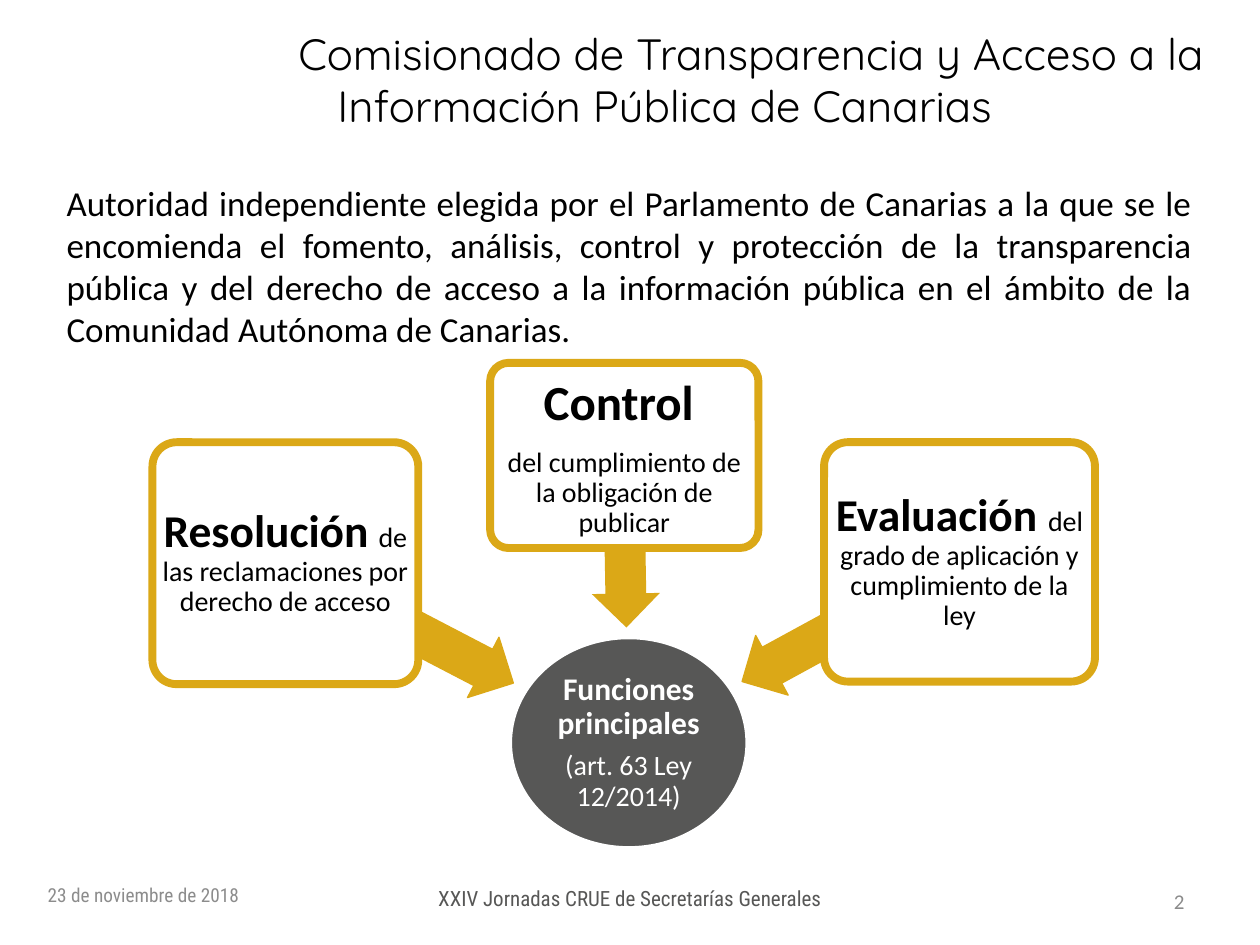
import dataclasses

import pptx
import pptx.dml.color
import pptx.enum.shapes
import pptx.enum.text
import pptx.util

Inches = pptx.util.Inches
Pt = pptx.util.Pt
Align = pptx.enum.text.PP_ALIGN
Anchor = pptx.enum.text.MSO_ANCHOR
Shape = pptx.enum.shapes.MSO_SHAPE


@dataclasses.dataclass(frozen=True)
class Theme:
    heading: str = "Quicksand"
    body: str = "Calibri"
    footer: str = "Roboto Condensed"
    black: str = "000000"
    white: str = "FFFFFF"
    gold: str = "DBA817"
    slate: str = "575756"
    date_gray: str = "8C8C8C"
    number_gray: str = "8B8B8B"
    title: int = 25
    intro: int = 20
    control: int = 28
    keyword: int = 26
    keyword_gap: int = 24
    hub: int = 18
    detail: int = 16
    small: int = 12
    date: int = 11


THEME = Theme()


def rgb(value):
    return pptx.dml.color.RGBColor.from_string(value)


def apply(target, values):
    for name, value in values.items():
        setattr(target, name, value)


def add_span(para, text, size, color, font=THEME.body, bold=False):
    span = para.add_run()
    span.text = text
    apply(span.font, {"size": Pt(size), "name": font, "bold": bold})
    span.font.color.rgb = rgb(color)


def add_text(page, box, text, size, color, font, align=Align.LEFT, anchor=Anchor.TOP):
    frame = page.shapes.add_textbox(*map(Inches, box)).text_frame
    apply(frame, {"word_wrap": True, "vertical_anchor": anchor})
    para = frame.paragraphs[0]
    para.alignment = align
    add_span(para, text, size, color, font)
    return para


def add_figure(page, kind, box, fill, line=None, width=0):
    figure = page.shapes.add_shape(kind, *map(Inches, box))
    figure.shadow.inherit = False
    figure.fill.solid()
    figure.fill.fore_color.rgb = rgb(fill)
    if line:
        figure.line.color.rgb = rgb(line)
        figure.line.width = Pt(width)
    else:
        figure.line.fill.background()
    return figure


def fill_figure(figure, paragraphs, color, inset):
    frame = figure.text_frame
    sides = ("left", "top", "right", "bottom")
    apply(frame, {f"margin_{side}": Inches(inset) for side in sides})
    apply(frame, {"word_wrap": True, "vertical_anchor": Anchor.MIDDLE})
    for index, (spacing, spans) in enumerate(paragraphs):
        para = frame.add_paragraph() if index else frame.paragraphs[0]
        apply(para, {"alignment": Align.CENTER, "line_spacing": spacing,
                     "space_after": Pt(round(0.35 * spans[0][1]))})
        for text, size, bold in spans:
            add_span(para, text, size, color, bold=bold)


def add_title(page, box):
    para = add_text(page, box, "Comisionado de Transparencia y Acceso a la Información Pública de Canarias",
                    THEME.title, THEME.black, THEME.heading, anchor=Anchor.MIDDLE)
    para.space_before = Pt(5.4)
    properties = para._p.get_or_add_pPr()
    properties.set("marL", str(Inches(0.81)))
    properties.set("indent", str(Inches(-0.31)))


def add_intro(page, box):
    add_text(page, box,
             "Autoridad independiente elegida por el Parlamento de Canarias a la que se le "
             "encomienda el fomento, análisis, control y protección de la transparencia pública "
             "y del derecho de acceso a la información pública en el ámbito de la Comunidad "
             "Autónoma de Canarias.",
             THEME.intro, THEME.black, THEME.body, Align.JUSTIFY)


def add_hub(page, box):
    hub = add_figure(page, Shape.OVAL, box, THEME.slate, THEME.white, 2)
    fill_figure(hub, [
        (0.9, [("Funciones principales", THEME.hub, True)]),
        (0.9, [("(art. 63 Ley 12/2014)", THEME.detail, False)]),
    ], THEME.white, 0.01)


def add_function(page, box, paragraphs, inset, arrow_box, angle, outline):
    arrow = add_figure(page, Shape.LEFT_ARROW, arrow_box, THEME.gold, outline, 0.75)
    arrow.rotation = angle
    arrow.adjustments[0] = 0.6
    card = add_figure(page, Shape.ROUNDED_RECTANGLE, box, THEME.white, THEME.gold, 4.5)
    card.adjustments[0] = 0.1
    fill_figure(card, paragraphs, THEME.black, inset)


def add_diagram(page, left, top):
    def place(x, y, width, height):
        return left + x, top + y, width, height

    add_hub(page, place(2.84, 2.18, 1.88, 1.67))
    resolution = [(0.9, [
        ("Resolución", THEME.keyword, True),
        (" ", THEME.keyword_gap, False),
        ("de las reclamaciones por derecho de acceso", THEME.detail, False),
    ])]
    control = [
        (1.0, [("Control ", THEME.control, True)]),
        (0.9, [("del cumplimiento de la obligación de publicar", THEME.detail, False)]),
    ]
    evaluation = [(0.9, [
        ("Evaluación ", THEME.keyword, True),
        ("del grado de aplicación y cumplimiento de la ley", THEME.detail, False),
    ])]
    functions = [
        ((0, 0.63, 2.11, 1.92), resolution, 0, (0.94, 1.8, 2.04, 0.54), 207.5, THEME.gold),
        ((2.68, 0, 2.13, 1.47), control, 0.02, (3.07, 1.15, 1.36, 0.54), 269, None),
        ((5.33, 0.63, 2.15, 1.9), evaluation, 0, (4.56, 1.79, 1.96, 0.54), 331.4, THEME.gold),
    ]
    for box, paragraphs, inset, arrow_box, angle, outline in functions:
        add_function(page, place(*box), paragraphs, inset, place(*arrow_box), angle, outline)


def add_footer(page, left, top):
    add_text(page, (left, top, 2.33, 0.4), "23 de noviembre de 2018",
             THEME.date, THEME.date_gray, THEME.footer, anchor=Anchor.MIDDLE)
    add_text(page, (left + 2.75, top + 0.08, 3.94, 0.31),
             "XXIV Jornadas CRUE de Secretarías Generales",
             THEME.small, THEME.slate, THEME.footer, Align.CENTER)
    add_text(page, (left + 8.66, top + 0.05, 0.56, 0.4), "2",
             THEME.small, THEME.number_gray, THEME.body, Align.RIGHT, Anchor.MIDDLE)


def main():
    deck = pptx.Presentation()
    apply(deck, {"slide_width": Inches(10), "slide_height": Inches(7.5)})
    page = deck.slides.add_slide(deck.slide_layouts[6])
    add_title(page, (1.77, 0, 8.15, 1.25))
    add_intro(page, (0.43, 1.39, 9.13, 1.45))
    add_diagram(page, 1.21, 2.88)
    add_footer(page, 0.28, 6.9)
    deck.save("out.pptx")


if __name__ == "__main__":
    main()
